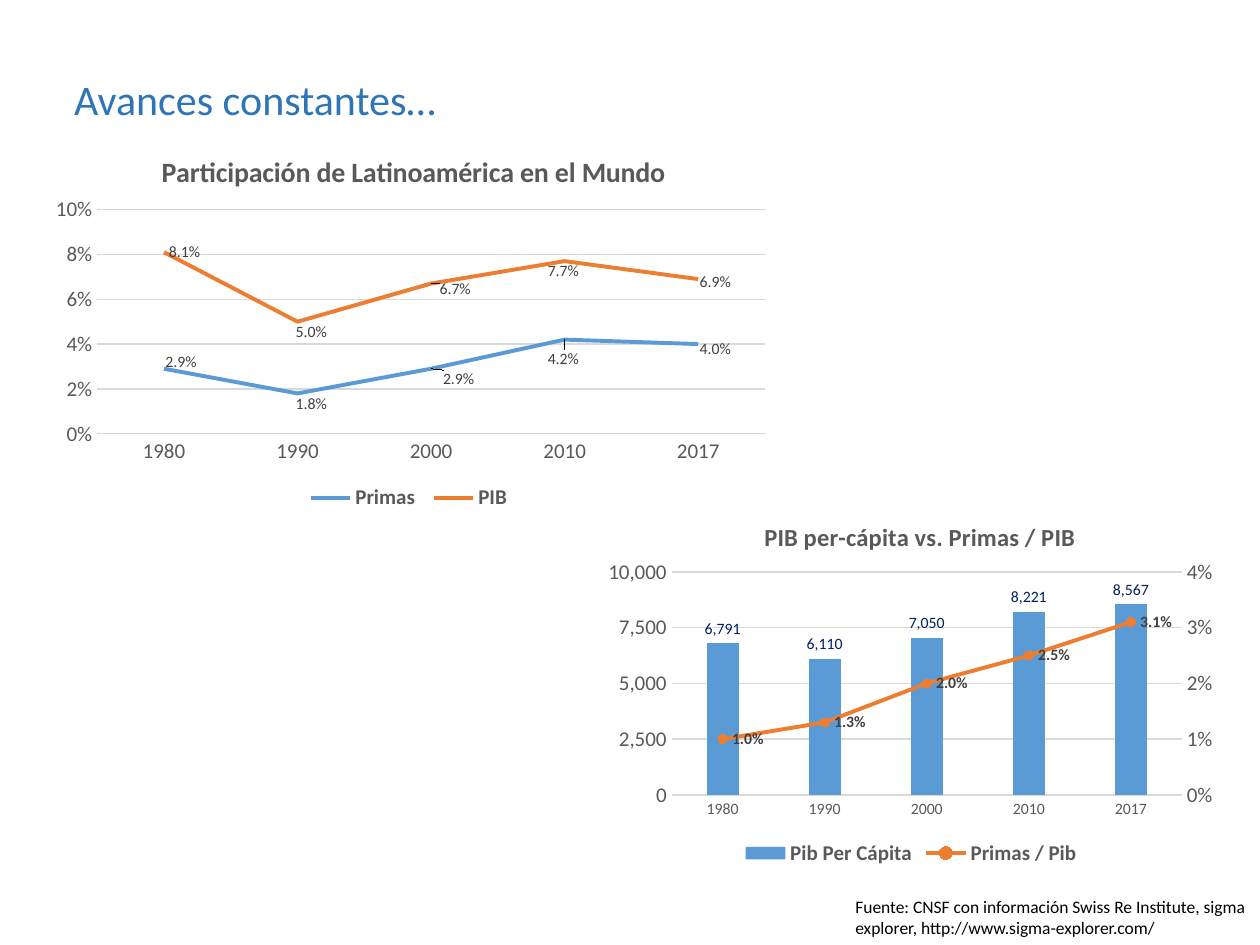
from lxml import etree
from pptx import Presentation
from pptx import util as u
from pptx.chart import axis as chart_axis
from pptx.chart import data as chart_data
from pptx.dml.color import RGBColor
from pptx.enum import chart as c
from pptx.oxml import parse_xml
from pptx.oxml.ns import nsdecls, qn

FONT = "Calibri"
TITLE_BLUE = RGBColor(0x2E, 0x75, 0xB6)
BLUE = RGBColor(0x5B, 0x9B, 0xD5)
ORANGE = RGBColor(0xED, 0x7D, 0x31)
NAVY = RGBColor(0x00, 0x20, 0x60)
GRAY = RGBColor(0x59, 0x59, 0x59)
DARK_GRAY = RGBColor(0x40, 0x40, 0x40)
LIGHT_GRAY = RGBColor(0xD9, 0xD9, 0xD9)
BLACK = RGBColor(0, 0, 0)

# Content: text boxes as (text, box in points, size, colour)
TEXTS = [
    ("Avances constantes…", (35.3, 38.2, 653, 36), 24, TITLE_BLUE),
    ("Fuente: CNSF con información Swiss Re Institute, sigma explorer, "
     "http://www.sigma-explorer.com/", (481.7, 508.3, 238.3, 31.5), 10, BLACK),
]
YEARS = ["1980", "1990", "2000", "2010", "2017"]

# Series as (name, values, number format, colour, label colour)
SHARE = {
    "title": "Participación de Latinoamérica en el Mundo", "title_size": 16,
    "title_at": (0.16, 0.05), "box": (21.6, 73.4, 424.1, 221),
    "plot_area": (0.08, 0.21, 0.9, 0.58),
    "series": [
        ("Primas ", [0.029, 0.018, 0.029, 0.042, 0.04], "0.0%", BLUE, DARK_GRAY),
        ("PIB", [0.081, 0.05, 0.067, 0.077, 0.069], "0.0%", ORANGE, DARK_GRAY),
    ],
}
PER_CAPITA = {
    "title": "PIB per-cápita vs. Primas / PIB", "title_size": 14,
    "title_at": (0.26, 0.06), "box": (340.6, 281.5, 360, 216),
    "plot_area": (0.12, 0.21, 0.81, 0.59),
    "series": [
        ("Pib Per Cápita", [6791, 6110, 7050, 8221, 8567], "#,##0", BLUE, NAVY),
        ("Primas / Pib", [0.01, 0.013, 0.02, 0.025, 0.031], "0.0%", ORANGE, DARK_GRAY),
    ],
}
# Label shifts in points from the place right of each data point
LABEL_SHIFTS = [
    {0: (-2, -4), 1: (-4, 6), 2: (4, 6), 3: (-12.5, 11), 4: (-2, 3)},
    {1: (-4, 6), 2: (2, 3), 3: (-12.5, 6), 4: (-2, 2)},
]


def set_font(font, size, color, bold=False):
    font.name, font.size, font.bold = FONT, u.Pt(size), bold
    font.color.rgb = color


def make_layout(x, y, width=None, height=None, mode="edge"):
    values = [("layoutTarget", "inner")] if width else []
    if mode:
        values += [("xMode", mode), ("yMode", mode)]
    values += [("x", x), ("y", y)]
    if width:
        values += [("w", width), ("h", height)]
    items = "".join(f'<c:{name} val="{value}"/>' for name, value in values)
    return parse_xml(f'<c:layout {nsdecls("c")}><c:manualLayout>{items}'
                     "</c:manualLayout></c:layout>")


def style_value_axis(axis, maximum, step, number_format):
    axis.minimum_scale, axis.maximum_scale, axis.major_unit = 0, maximum, step
    axis.major_tick_mark = axis.minor_tick_mark = c.XL_TICK_MARK.NONE
    axis.format.line.fill.background()
    axis.tick_labels.number_format = number_format
    axis.tick_labels.number_format_is_linked = False
    set_font(axis.tick_labels.font, 12, GRAY)


def style_line(series, color):
    series.smooth = False
    series.format.line.color.rgb = color
    series.format.line.width = u.Pt(2.25)


def add_labels(series, number_format, color, position, bold=False):
    labels = series.data_labels
    labels.show_value = True
    labels.number_format = number_format
    labels.number_format_is_linked = False
    labels.position = position
    set_font(labels.font, 9, color, bold)


def add_chart(slide, kind, content, category_size):
    data = chart_data.CategoryChartData()
    data.categories = YEARS
    for name, values, number_format, *_ in content["series"]:
        data.add_series(name, values, number_format)
    box = [u.Pt(value) for value in content["box"]]
    chart = slide.shapes.add_chart(kind, *box, data).chart
    set_font(chart.font, 10, BLACK)

    # Title
    title = chart.chart_title
    run = title.text_frame.paragraphs[0].add_run()
    run.text = content["title"]
    set_font(run.font, content["title_size"], GRAY, True)
    title_element = title._element
    for old in title_element.findall(qn("c:layout")):
        title_element.remove(old)
    title_element.find(qn("c:tx")).addnext(make_layout(*content["title_at"]))
    title.include_in_layout = False

    # Plot area
    plot_area = chart._chartSpace.chart.plotArea
    for old in plot_area.findall(qn("c:layout")):
        plot_area.remove(old)
    plot_area.insert(0, make_layout(*content["plot_area"]))

    # Legend, category axis and gridlines
    chart.has_legend = True
    chart.legend.position = c.XL_LEGEND_POSITION.BOTTOM
    chart.legend.include_in_layout = False
    set_font(chart.legend.font, 12, GRAY, True)
    axis = chart.category_axis
    axis.major_tick_mark = axis.minor_tick_mark = c.XL_TICK_MARK.NONE
    set_font(axis.tick_labels.font, category_size, GRAY)
    chart.value_axis.has_major_gridlines = True
    for line in (axis.format.line, chart.value_axis.major_gridlines.format.line):
        line.color.rgb = LIGHT_GRAY
        line.width = u.Pt(0.75)
    return chart


def move_to_second_axis(chart):
    """Turn the last column series into a line on a right-hand axis."""
    bar = chart.plots[0]._element
    series = bar.findall(qn("c:ser"))[-1]
    for old in series.findall(qn("c:invertIfNegative")):
        series.remove(old)
    line = parse_xml(
        f'<c:lineChart {nsdecls("c")}><c:grouping val="stacked"/><c:varyColors val="0"/>'
        '<c:marker val="1"/><c:axId val="501"/><c:axId val="502"/></c:lineChart>')
    line.insert(2, series)
    bar.addnext(line)
    last = chart.value_axis._element
    for tag, own, other, deleted, side, crosses in (
            ("catAx", 501, 502, 1, "b", "autoZero"), ("valAx", 502, 501, 0, "r", "max")):
        axis = parse_xml(
            f'<c:{tag} {nsdecls("c")}><c:axId val="{own}"/>'
            '<c:scaling><c:orientation val="minMax"/></c:scaling>'
            f'<c:delete val="{deleted}"/><c:axPos val="{side}"/>'
            f'<c:tickLblPos val="nextTo"/><c:crossAx val="{other}"/>'
            f'<c:crosses val="{crosses}"/></c:{tag}>')
        last.addnext(axis)
        last = axis
    return chart_axis.ValueAxis(last)


presentation = Presentation()
presentation.slide_width, presentation.slide_height = u.Pt(720), u.Pt(540)
slide = presentation.slides.add_slide(presentation.slide_layouts[6])

# Heading and source note
for words, box, size, color in TEXTS:
    frame = slide.shapes.add_textbox(*[u.Pt(value) for value in box]).text_frame
    frame.word_wrap = True
    run = frame.paragraphs[0].add_run()
    run.text = words
    set_font(run.font, size, color)

# Line chart with shifted labels
chart = add_chart(slide, c.XL_CHART_TYPE.LINE, SHARE, 12)
style_value_axis(chart.value_axis, 0.1, 0.02, "0%")
_, _, width, height = SHARE["box"]
for series, facts, shifts in zip(chart.plots[0].series, SHARE["series"], LABEL_SHIFTS):
    _, _, number_format, color, label_color = facts
    style_line(series, color)
    add_labels(series, number_format, label_color, c.XL_LABEL_POSITION.RIGHT)
    for index, (across, down) in shifts.items():
        label = series.points[index].data_label
        set_font(label.font, 9, label_color)
        label.position = c.XL_LABEL_POSITION.RIGHT
        element = series.data_labels._element.find(f'{qn("c:dLbl")}[{index - min(shifts) + 1}]')
        idx = element.find(qn("c:idx"))
        number = etree.Element(qn("c:numFmt"), formatCode=number_format, sourceLinked="0")
        idx.addnext(number)
        idx.addnext(make_layout(round(across / width, 4), round(down / height, 4), mode=None))

# Columns with a line on the right axis
chart = add_chart(slide, c.XL_CHART_TYPE.COLUMN_CLUSTERED, PER_CAPITA, 9)
style_value_axis(chart.value_axis, 10000, 2500, "#,##0")
style_value_axis(move_to_second_axis(chart), 0.04, 0.01, "0%")
columns, line = chart.plots
columns.gap_width, columns.overlap = 219, -27
columns.vary_by_categories = False
(_, _, number_format, color, label_color), ratio = PER_CAPITA["series"]
columns.series[0].format.fill.solid()
columns.series[0].format.fill.fore_color.rgb = color
add_labels(columns.series[0], number_format, label_color, c.XL_LABEL_POSITION.OUTSIDE_END)
_, _, number_format, color, label_color = ratio
series = line.series[0]
style_line(series, color)
series.marker.style, series.marker.size = c.XL_MARKER_STYLE.CIRCLE, 5
series.marker.format.fill.solid()
series.marker.format.fill.fore_color.rgb = color
series.marker.format.line.color.rgb = color
add_labels(series, number_format, label_color, c.XL_LABEL_POSITION.RIGHT, True)

presentation.save("out.pptx")
